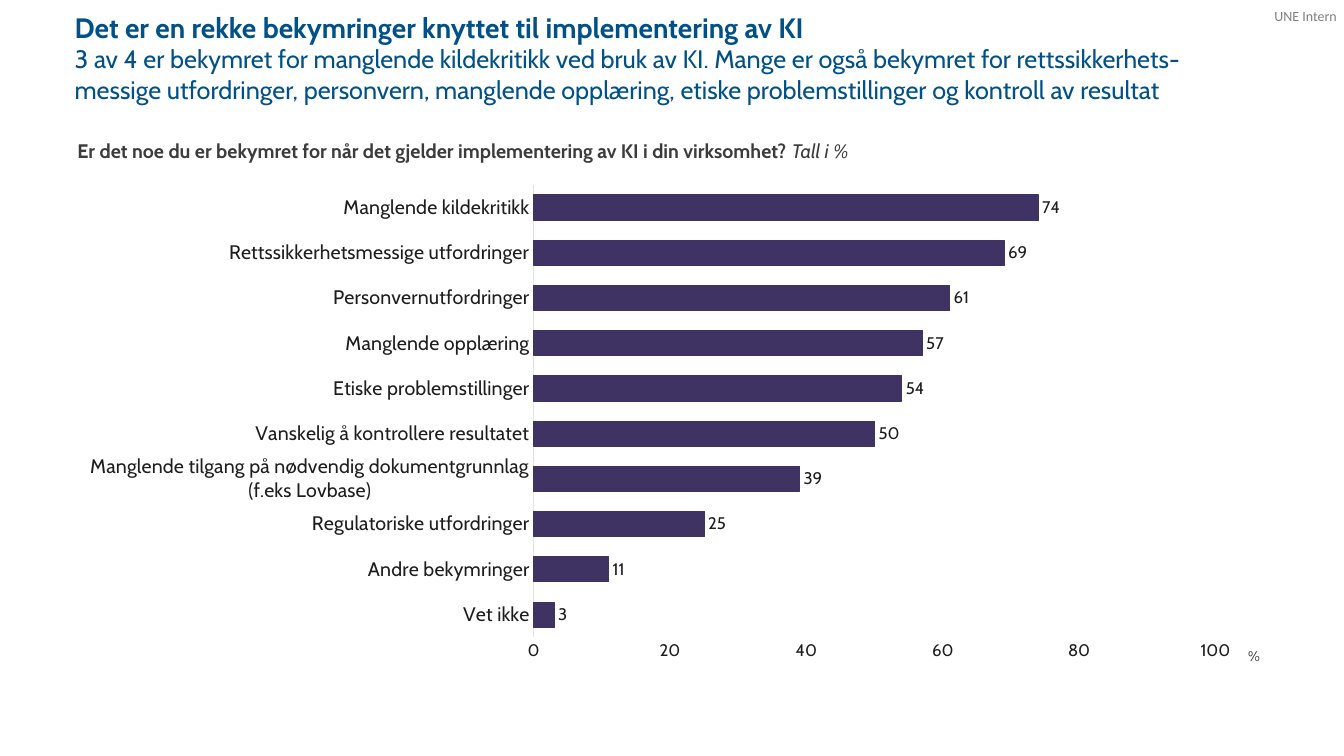
"""Build a slide with a bar chart of concerns about adopting AI."""
from lxml import etree
from pptx import Presentation
from pptx.chart.data import CategoryChartData
from pptx.dml.color import RGBColor
from pptx.enum.chart import XL_CHART_TYPE, XL_LABEL_POSITION, XL_TICK_MARK
from pptx.enum.text import MSO_ANCHOR, MSO_AUTO_SIZE, PP_ALIGN
from pptx.oxml.ns import qn
from pptx.util import Inches, Pt

COLORS = {"heading": "005187", "bar": "3E3363", "text": "3C3C3C",
          "label": "1E1E1E", "axis": "E2E2E2", "marking": "7F7F7F"}
CONCERNS = [
    ("Vet ikke", 3),
    ("Andre bekymringer", 11),
    ("Regulatoriske utfordringer", 25),
    ("Manglende tilgang på nødvendig dokumentgrunnlag (f.eks Lovbase)", 39),
    ("Vanskelig å kontrollere resultatet", 50),
    ("Etiske problemstillinger", 54),
    ("Manglende opplæring", 57),
    ("Personvernutfordringer", 61),
    ("Rettssikkerhetsmessige utfordringer", 69),
    ("Manglende kildekritikk", 74),
]
PLOT_AREA = {"x": 0.401, "y": 0.04, "w": 0.579, "h": 0.873}


def style(font, size, color, bold=False, italic=False, face="Cabin"):
    font.name, font.size, font.bold, font.italic = face, Pt(size), bold, italic
    font.color.rgb = RGBColor.from_string(COLORS[color])


def add_text(left, top, width, height, runs, wrap=True):
    frame = slide.shapes.add_textbox(
        Inches(left), Inches(top), Inches(width), Inches(height)).text_frame
    frame.word_wrap = wrap
    for text, formatting in runs:
        run = frame.paragraphs[0].add_run()
        run.text = text
        style(run.font, **formatting)
    return frame


prs = Presentation()
prs.slide_width, prs.slide_height = Inches(13.33), Inches(7.5)
slide = prs.slides.add_slide(prs.slide_layouts[5])

marking = add_text(12.64, 0.07, 0.65, 0.17, [
    ("UNE Intern", {"size": 10, "color": "marking", "face": "Calibri"})])
marking.margin_left = marking.margin_right = 0
marking.margin_top = marking.margin_bottom = 0

concern_data = CategoryChartData()
concern_data.categories = [concern for concern, share in CONCERNS]
concern_data.add_series("Andel", [share for concern, share in CONCERNS])
chart = slide.shapes.add_chart(
    XL_CHART_TYPE.BAR_CLUSTERED, Inches(0.61), Inches(1.63),
    Inches(11.68), Inches(5.14), concern_data).chart
chart.has_legend = chart.has_title = False
style(chart.font, 10, "text")

concern_axis, percent_axis = chart.category_axis, chart.value_axis
for axis, size in ((concern_axis, 14), (percent_axis, 12)):
    axis.has_major_gridlines = False
    axis.major_tick_mark = axis.minor_tick_mark = XL_TICK_MARK.NONE
    style(axis.tick_labels.font, size, "label")
concern_axis.format.line.color.rgb = RGBColor.from_string(COLORS["axis"])
concern_axis.format.line.width = Pt(0.75)
percent_axis.format.line.fill.background()
percent_axis.minimum_scale, percent_axis.maximum_scale = 0, 100
percent_axis.major_unit = 20

bars = chart.plots[0]
bars.gap_width = 80
bars.vary_by_categories = False
shares = bars.series[0]
shares.format.fill.solid()
shares.format.fill.fore_color.rgb = RGBColor.from_string(COLORS["bar"])
shares.format.line.color.rgb = RGBColor.from_string(COLORS["bar"])
shares.format.line.width = Pt(0.75)
share_labels = shares.data_labels
share_labels.show_value = True
share_labels.position = XL_LABEL_POSITION.OUTSIDE_END
style(share_labels.font, 12, "label")

plot_area = chart.element.find(".//" + qn("c:plotArea"))
for old_layout in plot_area.findall(qn("c:layout")):
    plot_area.remove(old_layout)
layout = etree.Element(qn("c:layout"))
plot_area.insert(0, layout)
manual = etree.SubElement(layout, qn("c:manualLayout"))
settings = {"layoutTarget": "inner", "xMode": "edge", "yMode": "edge", **PLOT_AREA}
for tag, value in settings.items():
    etree.SubElement(manual, qn(f"c:{tag}")).set("val", str(value))

title = slide.shapes.title
title.left, title.top = Inches(0.64), Inches(0.05)
title.width, title.height = Inches(11.95), Inches(0.68)
heading = title.text_frame
heading.text = (
    "Det er en rekke bekymringer knyttet til implementering av KI\n"
    "3 av 4 er bekymret for manglende kildekritikk ved bruk av KI. Mange er også "
    "bekymret for rettssikkerhets-messige utfordringer, personvern, manglende "
    "opplæring, etiske problemstillinger og kontroll av resultat")
heading.word_wrap = True
heading.auto_size = MSO_AUTO_SIZE.NONE
heading.vertical_anchor = MSO_ANCHOR.TOP
for paragraph, size, bold in zip(heading.paragraphs, (20, 18), (True, False)):
    paragraph.alignment = PP_ALIGN.LEFT
    style(paragraph.runs[0].font, size, "heading", bold)

add_text(0.67, 1.33, 9.24, 0.34, [
    ("Er det noe du er bekymret for når det gjelder implementering av KI "
     "i din virksomhet? ", {"size": 14, "color": "text", "bold": True}),
    ("Tall i %", {"size": 14, "color": "text", "italic": True})])
add_text(12.28, 6.37, 0.3, 0.27, [("%", {"size": 10, "color": "text"})], wrap=False)

prs.save("out.pptx")
